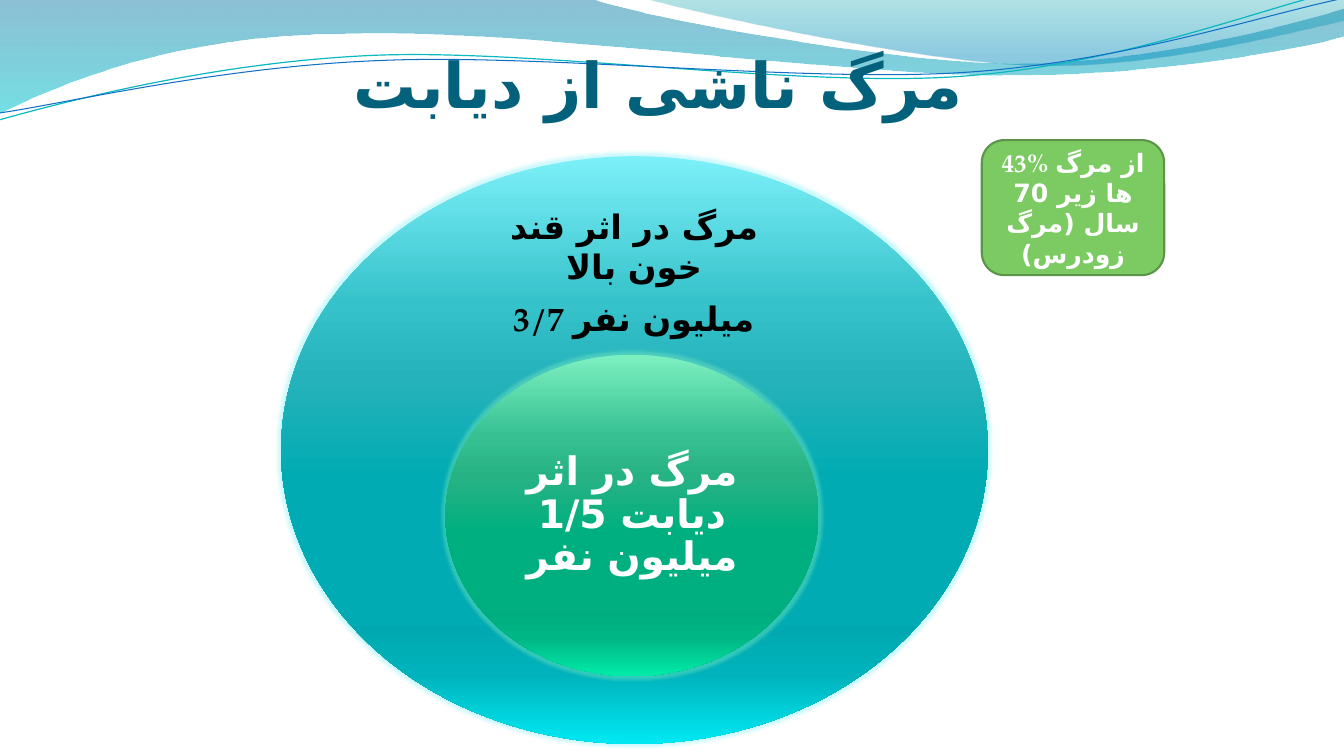
from lxml import etree
from pptx import Presentation
from pptx.dml.color import RGBColor
from pptx.enum.lang import MSO_LANGUAGE_ID
from pptx.enum.shapes import MSO_SHAPE
from pptx.enum.text import MSO_ANCHOR, PP_ALIGN
from pptx.oxml import parse_xml
from pptx.oxml.ns import nsdecls, qn
from pptx.util import Pt

SERIF = "TeX Gyre Pagella"
PERSIAN = "DejaVu Sans"
BLUE_GREEN = [(0, "7CF0F9"), (25, "36C2CA"), (38, "26B2BA"), (55, "00ABB3"),
              (80, "00A9B1"), (88, "00B2BB"), (100, "00E8F3")]
GREEN = [(0, "7DF0C0"), (25, "37C193"), (38, "27B284"), (55, "00AF7F"),
         (80, "00AD7E"), (88, "00B685"), (100, "00EBA7")]
WAVES = [
    ([(0, -0.7), (422.6, -0.7), (456.5, 12.2, 637.2, 45.4, 728, 45.4),
      (819.4, 45.4, 920.2, 18.7, 960, 6.5), (961.2, 26),
      (944, 31.7, 835.2, 54.7, 715.7, 54), (597, 54, 366.5, 20.2, 247, 24.5),
      (123.8, 25.2, 44, 59.8, -0.7, 81.4)],
     [(0, "0074A1", 45), (100, "00C6CF", 55)]),
    ([(460, -0.7), (489, 7.9, 654.5, 44.6, 738, 46.8),
      (821.5, 49.7, 923, 23, 960, 15.1), (960, 0)],
     [(0, "00A1A9", 30), (80, "008BBF", 45)]),
]
STRANDS = [
    ([(-0.7, 85.7), (46, 72.7, 152, 44.6, 265.7, 39.6),
      (379.4, 34.6, 568.8, 62.6, 684, 54.7),
      (799.2, 46.8, 901.4, 5.8, 958.3, -7.2)], "0AB8BF", 0.85),
    ([(0, 80.6), (45.4, 74.2, 157, 47.5, 272.2, 43.2),
      (386.6, 38.2, 573, 59, 687.6, 51.8),
      (802.8, 44.6, 903.6, 10.1, 960.5, -1.4)], "0F6FC6", 0.75),
]


def color(value):
    """Return the RGB colour of a hex string."""
    return RGBColor.from_string(value)


def apply(obj, values):
    """Set attributes of an object from a dict."""
    for name, value in values.items():
        setattr(obj, name, value)


def set_gradient(sp, stops):
    """Fill a shape from top to bottom with (position, colour, opacity) stops."""
    sp.fill.background()
    grad = parse_xml(f'<a:gradFill {nsdecls("a")} rotWithShape="1"><a:gsLst/>'
                     '<a:lin ang="5400000" scaled="0"/></a:gradFill>')
    for pos, value, *alpha in stops:
        gs = etree.SubElement(grad[0], qn("a:gs"), pos=str(pos * 1000))
        clr = etree.SubElement(gs, qn("a:srgbClr"), val=value)
        for percent in alpha:
            etree.SubElement(clr, qn("a:alpha"), val=str(percent * 1000))
    sp_pr = sp._element.spPr
    sp_pr.replace(sp_pr.find(qn("a:noFill")), grad)


def set_glow(sp, value):
    """Give a shape a soft outer glow."""
    effects = sp._element.spPr.find(qn("a:effectLst"))
    glow = etree.SubElement(effects, qn("a:glow"), rad=str(Pt(5)))
    clr = etree.SubElement(glow, qn("a:srgbClr"), val=value)
    etree.SubElement(clr, qn("a:alpha"), val="40000")


def bend(sp, segments):
    """Join each three line steps of a six-number segment into one cubic curve."""
    steps = list(sp._element.iter(qn("a:lnTo")))
    for seg in segments[1:]:
        first, *rest = steps[:len(seg) // 2]
        del steps[:len(seg) // 2]
        if rest:
            first.tag = qn("a:cubicBezTo")
            for step in rest:
                first.append(step[0])
                step.getparent().remove(step)


def add_outline(s, segments, close):
    """Add a curved freeform along the segments, without line or shadow."""
    points = [(Pt(seg[i]), Pt(seg[i + 1])) for seg in segments for i in range(0, len(seg), 2)]
    builder = s.shapes.build_freeform(*points[0], scale=1.0)
    builder.add_line_segments(points[1:], close=close)
    sp = builder.convert_to_shape()
    bend(sp, segments)
    sp.shadow.inherit = False
    sp.line.fill.background()
    return sp


def add_wave(s, segments, stops):
    """Add a filled header wave."""
    set_gradient(add_outline(s, segments, True), stops)


def add_strand(s, segments, value, width):
    """Add a thin curved header line."""
    sp = add_outline(s, segments, False)
    sp.fill.background()
    sp.line.color.rgb = color(value)
    sp.line.width = Pt(width)


def add_circle(s, box, stops):
    """Add a glowing gradient ellipse."""
    sp = s.shapes.add_shape(MSO_SHAPE.OVAL, *map(Pt, box))
    sp.shadow.inherit = False
    sp.line.fill.background()
    set_gradient(sp, stops)
    set_glow(sp, stops[0][1])


def write(tf, lines, font, value, anchor=MSO_ANCHOR.MIDDLE, margins=None, **spacing):
    """Write bold centred Persian paragraphs into a text frame."""
    apply(tf, {"word_wrap": True, "vertical_anchor": anchor, **(margins or {})})
    for i, line in enumerate(lines):
        p = tf.paragraphs[0] if i == 0 else tf.add_paragraph()
        apply(p, {"alignment": PP_ALIGN.CENTER, **spacing})
        r = p.add_run()
        r.text = line
        apply(r.font, {"bold": True, "language_id": MSO_LANGUAGE_ID.FARSI, **font})
        r.font.color.rgb = color(value)
        etree.SubElement(r.font._element, qn("a:cs"), typeface=PERSIAN)


def add_label(s, box, lines, size, value, inset, **options):
    """Add a text box with equal side insets."""
    tf = s.shapes.add_textbox(*map(Pt, box)).text_frame
    margins = {"margin_left": Pt(inset), "margin_right": Pt(inset)}
    write(tf, lines, {"name": SERIF, "size": Pt(size)}, value, margins=margins, **options)


def add_note(s, box, line):
    """Add the green rounded note."""
    sp = s.shapes.add_shape(MSO_SHAPE.ROUNDED_RECTANGLE, *map(Pt, box))
    sp.shadow.inherit = False
    sp.fill.solid()
    sp.fill.fore_color.rgb = color("7CCA62")
    sp.line.color.rgb = color("5C9549")
    sp.line.width = Pt(1.5)
    write(sp.text_frame, [line], {"name": SERIF, "size": Pt(18)}, "FFFFFF")


def place_title(s, box, line):
    """Format the title placeholder and bring it in front of the waves."""
    title = s.shapes.title
    apply(title, dict(zip(("left", "top", "width", "height"), map(Pt, box))))
    s.shapes._spTree.append(title._element)
    margins = {"margin_left": 0, "margin_right": 0, "margin_top": Pt(3.6), "margin_bottom": 0}
    write(title.text_frame, [line], {"name": "Roboto Condensed", "size": Pt(45)},
          "04617B", MSO_ANCHOR.BOTTOM, margins)


def main():
    """Build the slide."""
    prs = Presentation()
    apply(prs, {"slide_width": Pt(960), "slide_height": Pt(540)})
    s = prs.slides.add_slide(prs.slide_layouts[5])
    for segments, stops in WAVES:
        add_wave(s, segments, stops)
    for segments, value, width in STRANDS:
        add_strand(s, segments, value, width)
    add_circle(s, (200.8, 111.6, 504.8, 419.8), BLUE_GREEN)
    add_label(s, (320.4, 143.3, 265, 112), ["مرگ در اثر قند خون بالا", "3/7 میلیون نفر"],
              24, "000000", 13.7, anchor=MSO_ANCHOR.TOP, space_after=Pt(8.4))
    add_circle(s, (318.2, 253.4, 266.4, 229.7), GREEN)
    add_label(s, (357.1, 311, 188.6, 114.5), ["مرگ در اثر دیابت 1/5 میلیون نفر"],
              28, "FFFFFF", 15.8, line_spacing=0.9)
    place_title(s, (146.2, 42.5, 648, 44), "مرگ ناشی از دیابت")
    add_note(s, (701.3, 100.1, 130.3, 96.5), "43% از مرگ ها زیر 70 سال (مرگ زودرس)")
    prs.save("out.pptx")


if __name__ == "__main__":
    main()
